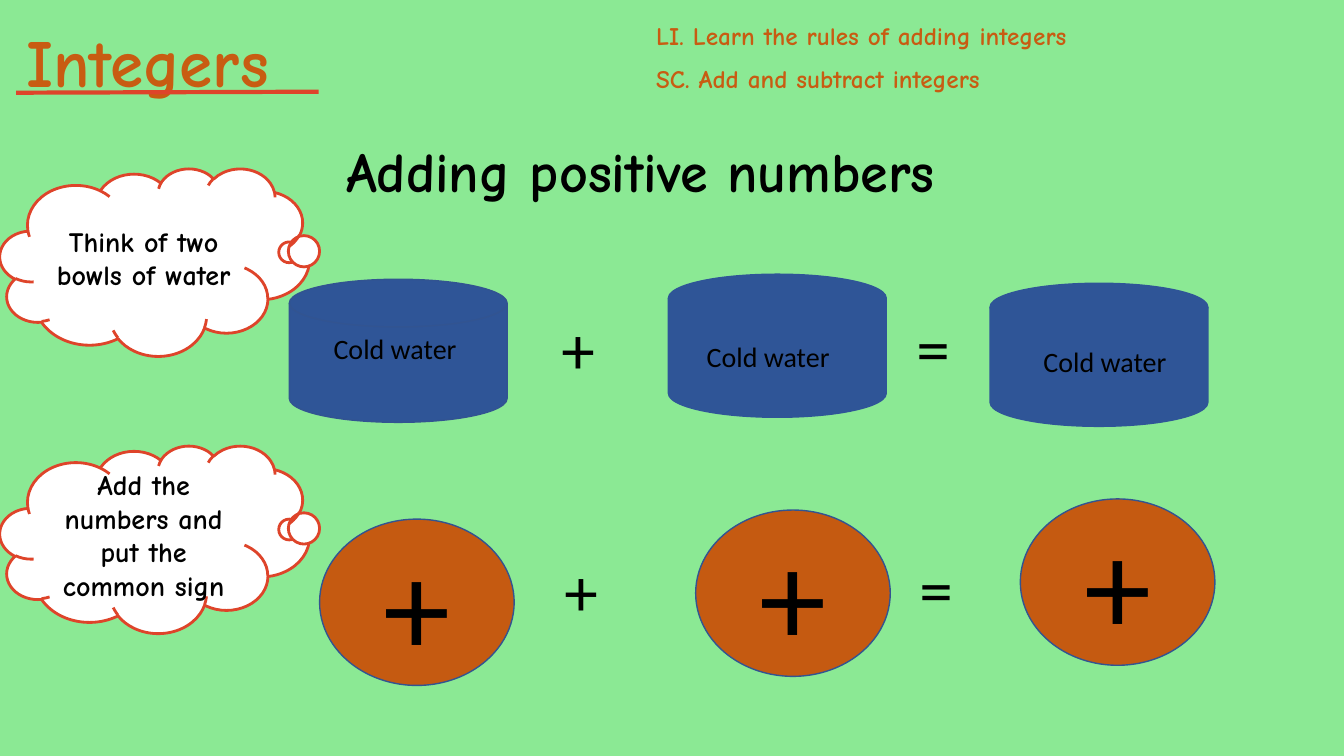
from lxml.etree import SubElement
from pptx import Presentation
from pptx.dml.color import RGBColor
from pptx.enum.shapes import MSO_CONNECTOR, MSO_SHAPE
from pptx.enum.text import MSO_ANCHOR, PP_ALIGN
from pptx.oxml.ns import qn
from pptx.util import Pt

PX = 9144  # 100 px to the inch
GREEN, ORANGE, RED, BLACK, WHITE = "8BE994", "C85C12", "DE442A", "000000", "FFFFFF"
RUST, BLUE, NAVY = "C55A11", "2F5597", "325491"

COMIC = dict(name="Comic Neue", bold=True)
HEADING = dict(COMIC, size=Pt(40), color=BLACK)
TITLE = dict(COMIC, size=Pt(48), color=ORANGE)
GOAL = dict(COMIC, size=Pt(18), color=ORANGE)
THOUGHT = dict(COMIC, size=Pt(20), color=BLACK)
LABEL = dict(name="Calibri", size=Pt(20), color=BLACK)
OPERATOR = dict(LABEL, size=Pt(48))
SIGN = dict(LABEL, size=Pt(96))

heading = ("Adding positive numbers ", (44, 131, 1202, 77))
title = ("Integers", (16, 15, 407, 91))
goals = (["LI. Learn the rules of adding integers", "SC. Add and subtract integers"],
         (641, 15, 692, 131))
underline = (16, 92, 316, 91)
thoughts = [("Think of two bowls of water", 167),
            ("Add the numbers and put the common sign", 442)]
bowls = [(287, 277, NAVY), (663, 272, BLUE), (982, 281, BLUE)]
bowl_labels = [(321, 324), (691, 332), (1025, 337)]
circles = [(317, 515), (690, 506), (1012, 495)]
operators = [("+", 547, 300), ("=", 899, 299), ("+", 550, 540), ("=", 902, 538)]


def rgb(value):
    return RGBColor.from_string(value)


def box(*px):
    return [v * PX for v in px]


def write(sp, lines, font, align=PP_ALIGN.LEFT, anchor=MSO_ANCHOR.TOP, wrap=True, before=0):
    """Fill a shape with paragraphs; before is the space above each, in percent of a line."""
    tf = sp.text_frame
    tf.word_wrap, tf.vertical_anchor = wrap, anchor
    for i, line in enumerate(lines):
        p = tf.add_paragraph() if i else tf.paragraphs[0]
        p.alignment = align
        if before:
            gap = SubElement(p._p.get_or_add_pPr(), qn("a:spcBef"))
            SubElement(gap, qn("a:spcPct"), val=str(before * 1000))
        r = p.add_run()
        r.text = line
        for key, value in font.items():
            if key == "color":
                r.font.color.rgb = rgb(value)
            else:
                setattr(r.font, key, value)


def add_shape(s, kind, at, fill, line=None, width=1):
    sp = s.shapes.add_shape(kind, *box(*at))
    sp.shadow.inherit = False
    sp.fill.solid()
    sp.fill.fore_color.rgb = rgb(fill)
    if line:
        sp.line.color.rgb = rgb(line)
        sp.line.width = Pt(width)
    else:
        sp.line.fill.background()
    return sp


def add_text(s, at, lines, font, **layout):
    write(s.shapes.add_textbox(*box(*at)), lines, font, **layout)


def main():
    prs = Presentation()
    prs.slide_width, prs.slide_height = box(1333, 750)
    s = prs.slides.add_slide(prs.slide_layouts[6])
    s.background.fill.solid()
    s.background.fill.fore_color.rgb = rgb(GREEN)
    middle = dict(align=PP_ALIGN.CENTER, anchor=MSO_ANCHOR.MIDDLE)

    text, at = heading
    write(add_shape(s, MSO_SHAPE.RECTANGLE, at, GREEN), [text], HEADING,
          align=PP_ALIGN.CENTER, before=50)
    text, at = title
    add_text(s, at, [text], TITLE, before=50)
    lines, at = goals
    add_text(s, at, lines, GOAL, before=50)

    rule = s.shapes.add_connector(MSO_CONNECTOR.STRAIGHT, *box(*underline))
    rule.line.color.rgb = rgb(RED)
    rule.line.width = Pt(3)
    SubElement(rule._element.spPr, qn("a:effectLst"))

    for text, y in thoughts:
        cloud = add_shape(s, MSO_SHAPE.CLOUD_CALLOUT, (0, y, 307, 186), WHITE, RED, 2)
        cloud.adjustments[0], cloud.adjustments[1] = 0.42, -0.05
        write(cloud, [text], THOUGHT, **middle)
    for x, y in circles:
        circle = add_shape(s, MSO_SHAPE.FLOWCHART_CONNECTOR, (x, y, 193, 165), RUST, NAVY)
        write(circle, ["+"], SIGN, **middle)
    for x, y, line in bowls:
        add_shape(s, MSO_SHAPE.FLOWCHART_MAGNETIC_DISK, (x, y, 216, 142), BLUE, line)
    for x, y in bowl_labels:
        add_text(s, (x, y, 143, 44), ["Cold water"], LABEL, wrap=False)
    for text, x, y in operators:
        add_text(s, (x, y, 93, 91), [text], OPERATOR)

    prs.save("out.pptx")


if __name__ == "__main__":
    main()
